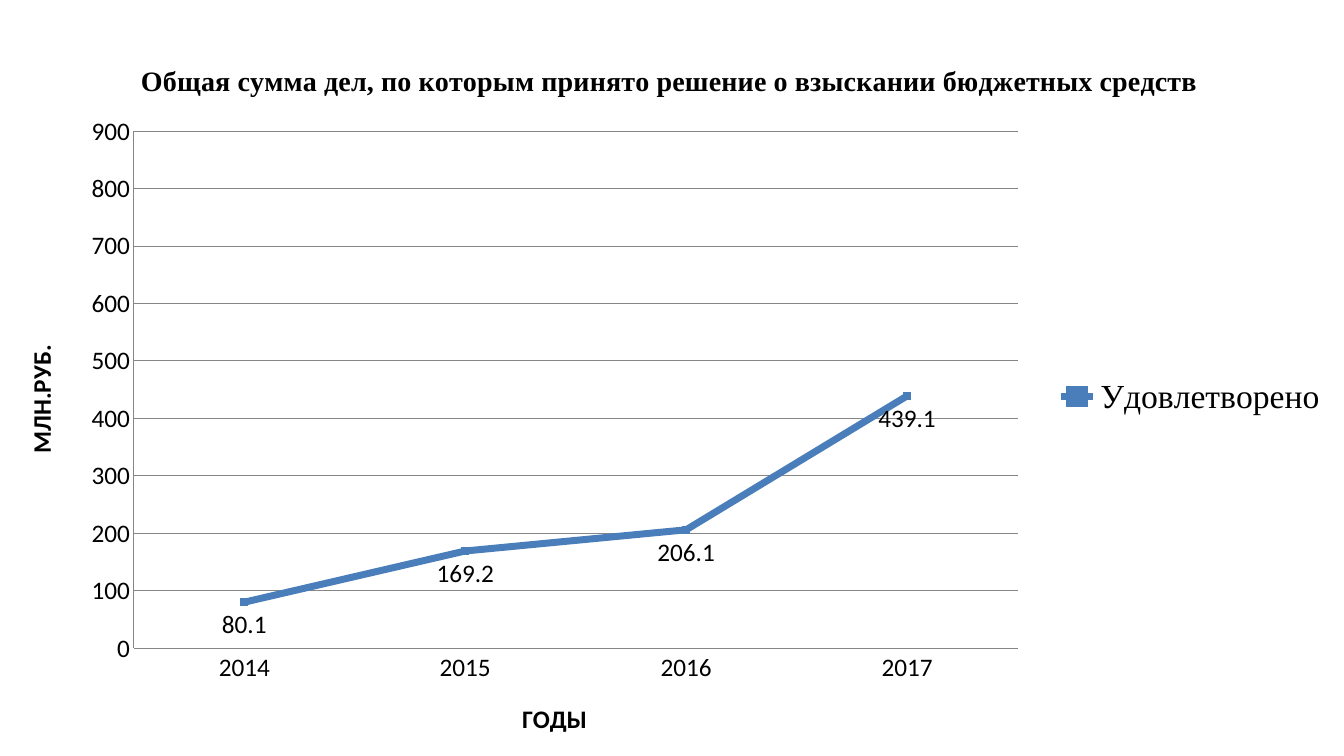
from lxml.etree import SubElement
from pptx import Presentation
from pptx.chart.data import CategoryChartData
from pptx.dml.color import RGBColor
from pptx.enum.chart import (XL_CHART_TYPE as ChartType, XL_LABEL_POSITION as LabelPosition,
                             XL_LEGEND_POSITION as LegendPosition, XL_MARKER_STYLE as MarkerStyle,
                             XL_TICK_MARK as TickMark)
from pptx.oxml.ns import qn
from pptx.util import Inches, Pt

WIDTH, HEIGHT = Inches(13.33), Inches(7.5)
COLORS = {"text": "000000", "grid": "868686", "series": "4A7EBB"}
BODY_FONT, SERIF_FONT = "Calibri", "Times New Roman"
YEARS = ["2014", "2015", "2016", "2017"]
SUMS = [80.1, 169.2, 206.1, 439.1]
# Inner plot area as shares of the chart's size
PLOT = {"x": 0.1, "y": 0.13, "w": 0.66, "h": 0.72}


def color(name):
    return RGBColor.from_string(COLORS[name])


def set_font(font, size, face=BODY_FONT, bold=False):
    font.size, font.name, font.bold = Pt(size), face, bold
    font.color.rgb = color("text")


def set_title(owner, text, size, face=BODY_FONT):
    """Title a chart or an axis."""
    frame = (owner.chart_title if hasattr(owner, "chart_title") else owner.axis_title).text_frame
    frame.text = text
    set_font(frame.paragraphs[0].font, size, face, bold=True)


def style_line(line, name, width):
    line.color.rgb = color(name)
    line.width = Pt(width)


def style_axis(axis, title):
    set_title(axis, title, 18)
    axis.major_tick_mark = axis.minor_tick_mark = TickMark.NONE
    set_font(axis.tick_labels.font, 18)
    style_line(axis.format.line, "grid", 0.75)


def place_plot(chart):
    area = chart.element.find(".//" + qn("c:plotArea"))
    layout = area.find(qn("c:layout"))
    if layout is None:
        layout = SubElement(area, qn("c:layout"))
        area.insert(0, layout)
    manual = SubElement(layout, qn("c:manualLayout"))
    settings = {"layoutTarget": "inner", "xMode": "edge", "yMode": "edge", **PLOT}
    for tag, value in settings.items():
        SubElement(manual, qn("c:" + tag)).set("val", str(value))


def style_series(series):
    series.smooth = False
    style_line(series.format.line, "series", 5)
    marker = series.marker
    marker.style, marker.size = MarkerStyle.SQUARE, 5
    marker.format.fill.solid()
    marker.format.fill.fore_color.rgb = color("series")
    marker.format.line.color.rgb = color("series")
    labels = series.data_labels
    labels.show_value = True
    labels.position = LabelPosition.BELOW
    set_font(labels.font, 18)


def add_line_chart(page):
    chart_data = CategoryChartData(number_format="General")
    chart_data.categories = YEARS
    chart_data.add_series("Удовлетворено", SUMS)
    top = int(HEIGHT * 0.05)
    chart = page.shapes.add_chart(ChartType.LINE_MARKERS, 0, top, Inches(13.28),
                                  HEIGHT - top, chart_data).chart
    set_font(chart.font, 18)
    set_title(chart, "Общая сумма дел, по которым принято решение о взыскании бюджетных средств",
              20, SERIF_FONT)
    chart.plots[0].vary_by_categories = False

    # Axes and gridlines
    style_axis(chart.category_axis, "ГОДЫ")
    values = chart.value_axis
    style_axis(values, "МЛН.РУБ.")
    values.minimum_scale, values.maximum_scale, values.major_unit = 0, 900, 100
    values.has_major_gridlines = True
    style_line(values.major_gridlines.format.line, "grid", 0.75)

    # Legend
    chart.has_legend = True
    chart.legend.position = LegendPosition.RIGHT
    chart.legend.include_in_layout = False
    set_font(chart.legend.font, 24, SERIF_FONT)

    style_series(chart.series[0])
    place_plot(chart)


def main():
    deck = Presentation()
    deck.slide_width, deck.slide_height = WIDTH, HEIGHT
    page = deck.slides.add_slide(deck.slide_layouts[6])
    add_line_chart(page)
    deck.save("out.pptx")


if __name__ == "__main__":
    main()
